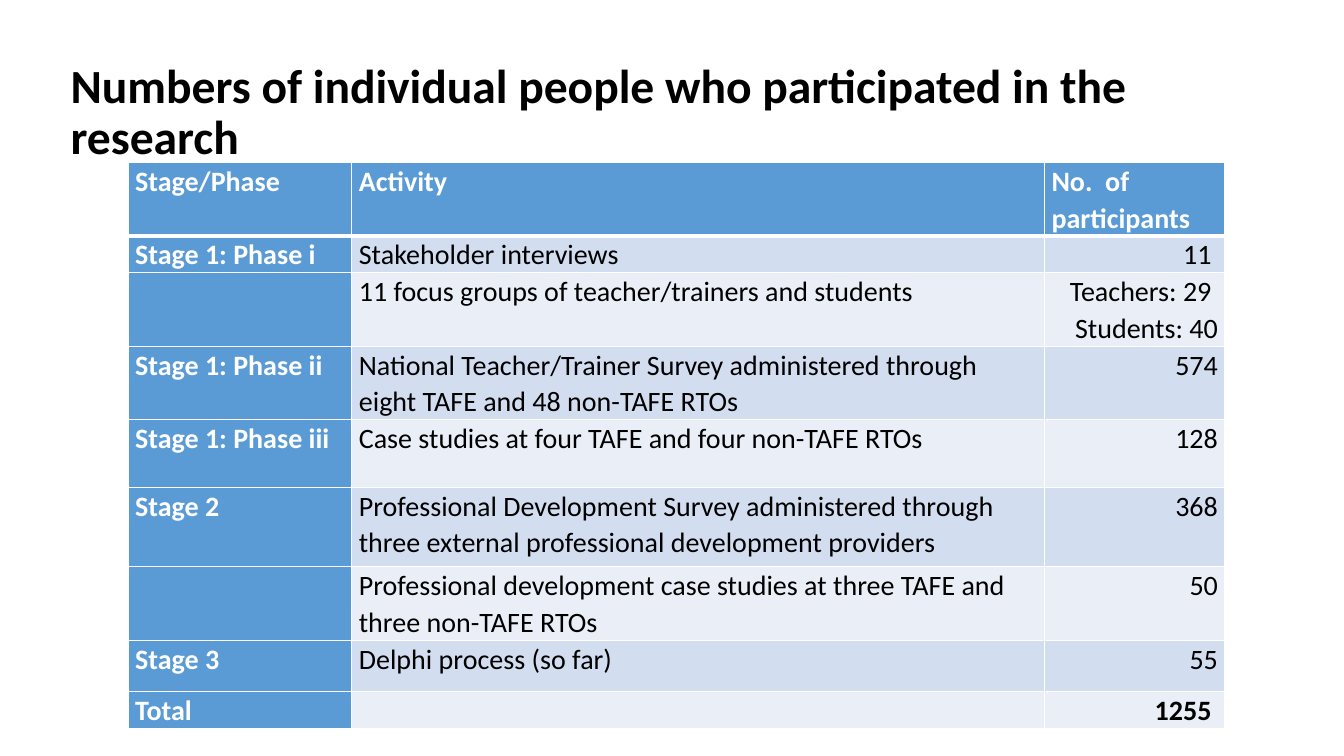
from dataclasses import dataclass

from lxml import etree
from pptx import Presentation
from pptx.dml.color import RGBColor
from pptx.enum.text import MSO_ANCHOR, MSO_AUTO_SIZE, PP_ALIGN
from pptx.oxml.ns import qn
from pptx.util import Inches, Pt

LEFT, RIGHT = PP_ALIGN.LEFT, PP_ALIGN.RIGHT
MIDDLE, NO_AUTOFIT = MSO_ANCHOR.MIDDLE, MSO_AUTO_SIZE.NONE


@dataclass(frozen=True)
class Theme:
    font: str = "Calibri"
    title_size: int = 34
    table_size: int = 20
    black: str = "000000"
    white: str = "FFFFFF"
    header: str = "5B9BD5"
    bands: tuple = ("D2DEEF", "EAEFF7")


THEME = Theme()


def write(frame, text, *, size, color, bold=False, align=LEFT, spacing=1.07):
    """Fill a text frame, one paragraph for each line of text."""
    for index, line in enumerate(text.split("\n")):
        para = frame.add_paragraph() if index else frame.paragraphs[0]
        para.alignment = align
        para.line_spacing = spacing
        span = para.add_run()
        span.text = line
        span.font.name = THEME.font
        span.font.size = Pt(size)
        span.font.bold = bold
        span.font.color.rgb = RGBColor.from_string(color)


def add_borders(cell, bottom_width):
    """Draw white lines on all four sides of a cell."""
    properties = cell._tc.get_or_add_tcPr()
    for side, width in (("L", 1), ("R", 1), ("T", 1), ("B", bottom_width)):
        line = etree.SubElement(properties, qn(f"a:ln{side}"), w=str(Pt(width)))
        fill = etree.SubElement(line, qn("a:solidFill"))
        etree.SubElement(fill, qn("a:srgbClr"), val=THEME.white)


# Deck and page
deck = Presentation()
deck.slide_width, deck.slide_height = Inches(13.33), Inches(7.5)
page = deck.slides.add_slide(deck.slide_layouts[5])

# Title
title = page.shapes.title
title.left, title.top = Inches(0.6), Inches(0.4)
title.width, title.height = Inches(12.13), Inches(1.45)
title.text_frame.word_wrap = True
title.text_frame.auto_size = NO_AUTOFIT
title.text_frame.vertical_anchor = MIDDLE
write(title.text_frame, "Numbers of individual people who participated in the research",
      size=THEME.title_size, color=THEME.black, bold=True, spacing=0.9)

# Participant counts: row height, stage, activity, number
ROWS = [
    (0.73, "Stage/Phase", "Activity", "No.  of participants"),
    (0.36, "Stage 1: Phase i", "Stakeholder interviews", "11 "),
    (0.73, "", "11 focus groups of teacher/trainers and students",
     "Teachers: 29 \nStudents: 40"),
    (0.73, "Stage 1: Phase ii",
     "National Teacher/Trainer Survey administered through eight TAFE and 48 non-TAFE RTOs",
     "574"),
    (0.67, "Stage 1: Phase iii", "Case studies at four TAFE and four non-TAFE RTOs", "128"),
    (0.79, "Stage 2",
     "Professional Development Survey administered through three external professional "
     "development providers", "368"),
    (0.73, "",
     "Professional development case studies at three TAFE and three non-TAFE RTOs", "50"),
    (0.51, "Stage 3", "Delphi process (so far)", "55"),
    (0.36, "Total", "", "1255 "),
]
COLUMN_WIDTHS = (2.22, 6.87, 1.79)

# Table
table = page.shapes.add_table(
    len(ROWS), len(COLUMN_WIDTHS), Inches(1.27), Inches(1.61),
    Inches(sum(COLUMN_WIDTHS)), Inches(sum(row[0] for row in ROWS))).table
table.horz_banding = False
for column, width in zip(table.columns, COLUMN_WIDTHS):
    column.width = Inches(width)

for row_index, (height, *texts) in enumerate(ROWS):
    table.rows[row_index].height = Inches(height)
    is_header = row_index == 0
    is_total = row_index == len(ROWS) - 1
    for column_index, text in enumerate(texts):
        cell = table.cell(row_index, column_index)
        is_label = is_header or column_index == 0
        is_number = column_index == 2 and not is_header
        cell.margin_left = cell.margin_right = Inches(0.07)
        cell.margin_top = cell.margin_bottom = 0
        add_borders(cell, 3 if is_header else 1)
        cell.fill.solid()
        cell.fill.fore_color.rgb = RGBColor.from_string(
            THEME.header if is_label else THEME.bands[(row_index - 1) % 2])
        if text:
            write(cell.text_frame, text, size=THEME.table_size,
                  color=THEME.white if is_label else THEME.black,
                  bold=is_label or is_total, align=RIGHT if is_number else LEFT)

deck.save("out.pptx")
